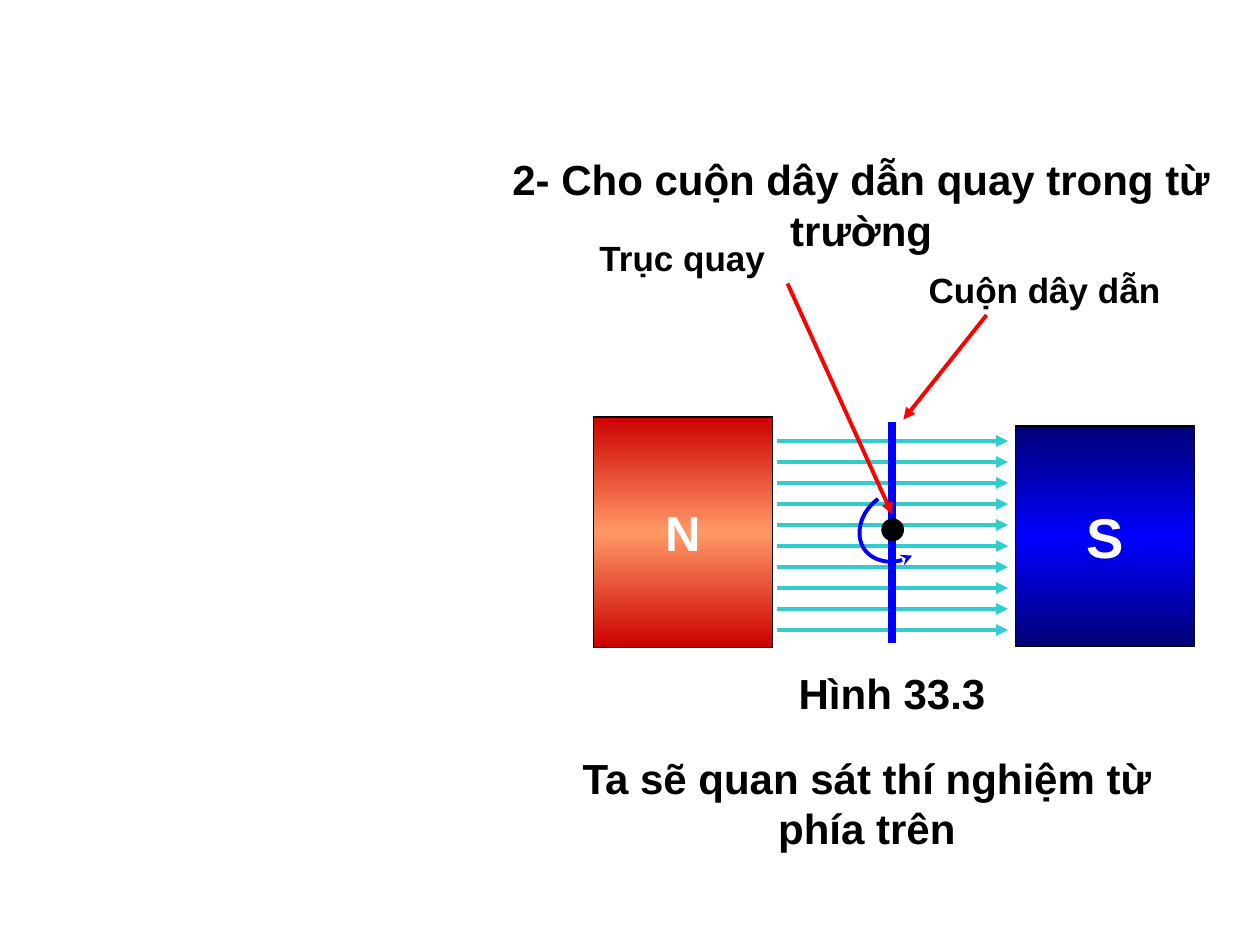
import dataclasses
import copy

import pptx
import pptx.dml.color
import pptx.enum.shapes
import pptx.enum.text
import pptx.oxml.ns
import pptx.util
from pptx.util import Inches

SHAPES = pptx.enum.shapes.MSO_SHAPE
ANCHOR = pptx.enum.text.MSO_ANCHOR
AUTO_SIZE = pptx.enum.text.MSO_AUTO_SIZE


@dataclasses.dataclass(frozen=True)
class Theme:
    font: str = "Arial"
    ink: str = "000000"
    pole_text: str = "FFFFFF"
    field: str = "33CCCC"
    pointer: str = "FF0000"
    coil: str = "0000FF"
    north: tuple = ("CC0000", "FF9966", "CC0000")
    south: tuple = ("000076", "0000FF", "000076")
    heading: int = 24
    label: int = 20
    north_size: int = 28
    south_size: int = 32
    thin: float = 0.75
    arrow: float = 2.25
    thick: float = 4.5


@dataclasses.dataclass(frozen=True)
class Box:
    left: float
    top: float
    width: float
    height: float

    def inner(self, left, top, width, height):
        return Box(self.left + left, self.top + top, width, height)

    def point(self, x, y):
        return Inches(self.left + x), Inches(self.top + y)

    def place(self):
        return (*self.point(0, 0), Inches(self.width), Inches(self.height))


THEME = Theme()


def rgb(color):
    return pptx.dml.color.RGBColor.from_string(color)


def write(frame, text, size, color=THEME.ink):
    paragraph = frame.paragraphs[0]
    paragraph.alignment = pptx.enum.text.PP_ALIGN.CENTER
    run = paragraph.add_run()
    run.text = text
    run.font.name = THEME.font
    run.font.size = pptx.util.Pt(size)
    run.font.bold = True
    run.font.color.rgb = rgb(color)


def set_line(line, color, width, head=None):
    line.color.rgb = rgb(color)
    line.width = pptx.util.Pt(width)
    if head:
        outline = line._get_or_add_ln()
        outline.append(outline.makeelement(pptx.oxml.ns.qn("a:tailEnd"), {"type": head}))


def add_line(slide, start, end, color, width, head=None):
    line = slide.shapes.add_connector(
        pptx.enum.shapes.MSO_CONNECTOR.STRAIGHT, *start, *end)
    set_line(line.line, color, width, head)
    properties = line._element.spPr
    properties.append(properties.makeelement(pptx.oxml.ns.qn("a:effectLst"), {}))


def add_text(slide, box, text, size):
    frame = slide.shapes.add_textbox(*box.place()).text_frame
    frame.word_wrap = True
    frame.auto_size = AUTO_SIZE.SHAPE_TO_FIT_TEXT
    write(frame, text, size)


def add_heading(slide, box, text):
    heading = slide.shapes.title
    heading.left, heading.top, heading.width, heading.height = box.place()
    frame = heading.text_frame
    frame.word_wrap = True
    frame.auto_size = AUTO_SIZE.NONE
    frame.vertical_anchor = ANCHOR.TOP
    write(frame, text, THEME.heading)


def add_pole(slide, box, letter, size, colors):
    pole = slide.shapes.add_shape(SHAPES.RECTANGLE, *box.place())
    pole.shadow.inherit = False
    pole.fill.gradient()
    pole.fill.gradient_angle = 90
    # A third stop makes the band in the middle
    stops = pole._element.spPr.find(".//" + pptx.oxml.ns.qn("a:gsLst"))
    stops.insert(1, copy.deepcopy(stops[0]))
    for stop, position, color in zip(pole.fill.gradient_stops, (0, 0.5, 1), colors):
        stop.position = position
        stop.color.rgb = rgb(color)
    set_line(pole.line, THEME.ink, THEME.thin)
    pole.text_frame.word_wrap = False
    pole.text_frame.vertical_anchor = ANCHOR.MIDDLE
    write(pole.text_frame, letter, size, THEME.pole_text)


def add_field(slide, box, count=10):
    step = box.height / (count - 1)
    for index in range(count):
        y = index * step
        add_line(slide, box.point(0, y), box.point(box.width, y),
                 THEME.field, THEME.arrow, "triangle")


def bezier(start, control1, control2, end, steps=16):
    for index in range(1, steps + 1):
        t = index / steps
        weights = ((1 - t) ** 3, 3 * t * (1 - t) ** 2, 3 * t * t * (1 - t), t ** 3)
        points = (start, control1, control2, end)
        yield tuple(sum(w * p[axis] for w, p in zip(weights, points)) for axis in (0, 1))


def add_coil(slide, box):
    middle = box.width / 2
    add_line(slide, box.point(middle, 0), box.point(middle, box.height),
             THEME.coil, THEME.thick)

    # Axis of rotation
    axis = slide.shapes.add_shape(SHAPES.OVAL, *box.inner(middle - 0.08, 0.77, 0.17, 0.17).place())
    axis.shadow.inherit = False
    axis.fill.solid()
    axis.fill.fore_color.rgb = rgb(THEME.ink)
    set_line(axis.line, THEME.ink, THEME.thin)

    # Direction of rotation
    start, bend, end = (0.19, 0.61), (0.08, 1.01), (0.46, 1.06)
    curve = [*bezier(start, (0.05, 0.71), (0, 0.89), bend),
             *bezier(bend, (0.16, 1.12), (0.33, 1.14), end)]
    builder = slide.shapes.build_freeform(*box.point(*start))
    builder.add_line_segments([box.point(*point) for point in curve], close=False)
    turn = builder.convert_to_shape()
    turn.shadow.inherit = False
    turn.fill.background()
    set_line(turn.line, THEME.coil, THEME.arrow, "stealth")


def add_magnet(slide, box):
    add_field(slide, box.inner(1.46, 0.19, 1.83, 1.5))
    add_pole(slide, box.inner(0, 0, 1.42, 1.83), "N", THEME.north_size, THEME.north)
    add_pole(slide, box.inner(3.35, 0.07, 1.42, 1.75), "S", THEME.south_size, THEME.south)
    add_coil(slide, box.inner(2.07, 0.04, 0.6, 1.75))


def add_labels(slide, box):
    labels = (
        ("Trục quay", (0, 0, 2.17, 0.43), (1.92, 0.42), (2.75, 2.25)),
        ("Cuộn dây dẫn", (2.92, 0.25, 2.08, 0.43), (3.5, 0.67), (2.84, 1.5)),
    )
    for text, area, start, end in labels:
        add_text(slide, box.inner(*area), text, THEME.label)
        add_line(slide, box.point(*start), box.point(*end),
                 THEME.pointer, THEME.arrow, "triangle")


def add_captions(slide, box):
    add_text(slide, box.inner(1.66, 0, 2.5, 0.5), "Hình 33.3", THEME.heading)
    add_text(slide, box.inner(0, 0.67, box.width, 0.9),
             "Ta sẽ quan sát thí nghiệm từ phía trên", THEME.heading)


def main():
    deck = pptx.Presentation()
    deck.slide_width, deck.slide_height = Inches(10), Inches(7.5)
    slide = deck.slides.add_slide(deck.slide_layouts.get_by_name("Title Only"))
    add_heading(slide, Box(3.92, 1.17, 5.83, 0.9), "2- Cho cuộn dây dẫn quay trong từ trường")
    add_magnet(slide, Box(4.71, 3.31, 4.77, 1.83))
    add_labels(slide, Box(4.33, 1.83, 5, 2.25))
    add_captions(slide, Box(4.17, 5.25, 5.42, 1.57))
    deck.save("out.pptx")


if __name__ == "__main__":
    main()
